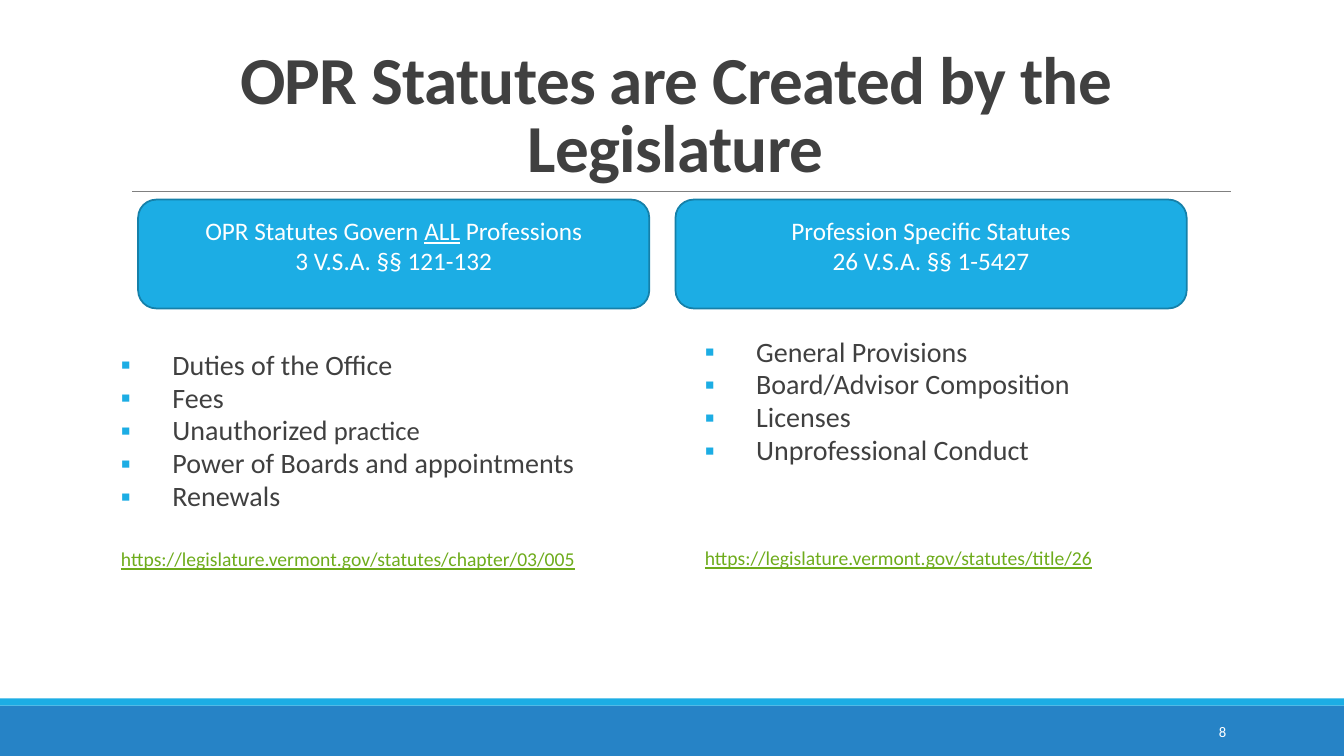
from dataclasses import dataclass

from lxml.etree import SubElement
from pptx import Presentation
from pptx.dml.color import RGBColor
from pptx.enum.shapes import MSO_CONNECTOR, MSO_SHAPE
from pptx.enum.text import MSO_ANCHOR, MSO_AUTO_SIZE, PP_ALIGN
from pptx.oxml.ns import qn
from pptx.util import Inches, Pt


@dataclass(frozen=True)
class Theme:
    font: str = "Calibri"
    ink: str = "404040"
    white: str = "FFFFFF"
    accent: str = "1CADE4"
    accent_edge: str = "1580A9"
    footer: str = "2683C6"
    rule: str = "808080"
    link: str = "6EAC1C"
    title_size: float = 48
    item_size: float = 20
    small_item_size: float = 19
    heading_size: float = 18
    link_size: float = 14
    number_size: float = 10.5


class StatuteSlide:
    def __init__(self, slide, theme):
        self.slide = slide
        self.theme = theme

    def place(self, shape, left, top, width, height):
        shape.left, shape.top = Inches(left), Inches(top)
        shape.width, shape.height = Inches(width), Inches(height)

    def style(self, paragraph, size, color, bold=False, underline=False):
        font = paragraph.font
        font.name, font.size = self.theme.font, Pt(size)
        font.bold, font.underline = bold, underline
        font.color.rgb = RGBColor.from_string(color)

    def block(self, kind, box, fill, edge=None):
        shape = self.slide.shapes.add_shape(kind, *map(Inches, box))
        shape.shadow.inherit = False
        shape.fill.solid()
        shape.fill.fore_color.rgb = RGBColor.from_string(fill)
        if edge:
            shape.line.color.rgb = RGBColor.from_string(edge)
            shape.line.width = Pt(1.25)
        else:
            shape.line.fill.background()
        return shape

    def rule(self, left, right, y):
        line = self.slide.shapes.add_connector(
            MSO_CONNECTOR.STRAIGHT, Inches(left), Inches(y), Inches(right), Inches(y))
        line.line.color.rgb = RGBColor.from_string(self.theme.rule)
        line.line.width = Pt(0.5)
        SubElement(line._element.spPr, qn("a:effectLst"))

    def title(self, text, box):
        title = self.slide.shapes.title
        self.place(title, *box)
        frame = title.text_frame
        frame.text = text
        frame.word_wrap = True
        frame.auto_size = MSO_AUTO_SIZE.NONE
        frame.vertical_anchor = MSO_ANCHOR.BOTTOM
        paragraph = frame.paragraphs[0]
        paragraph.alignment = PP_ALIGN.CENTER
        paragraph.line_spacing = 0.85
        self.style(paragraph, self.theme.title_size, self.theme.ink, bold=True)
        # Slightly tightened letters
        paragraph._p.pPr.find(qn("a:defRPr")).set("spc", "-50")

    def heading(self, lines, box):
        card = self.block(MSO_SHAPE.ROUNDED_RECTANGLE, box,
                          self.theme.accent, self.theme.accent_edge)
        frame = card.text_frame
        frame.word_wrap = True
        frame.vertical_anchor = MSO_ANCHOR.TOP
        frame.margin_top = Inches(0.1)
        for index, parts in enumerate(lines):
            paragraph = frame.add_paragraph() if index else frame.paragraphs[0]
            paragraph.alignment = PP_ALIGN.CENTER
            self.style(paragraph, self.theme.heading_size, self.theme.white)
            for part in parts:
                run = paragraph.add_run()
                run.text = part
                if part == "ALL":
                    run.font.underline = True

    def bullet(self, paragraph):
        properties = paragraph._p.get_or_add_pPr()
        properties.set("marL", str(Inches(0.51)))
        properties.set("indent", str(-Inches(0.51)))
        color = SubElement(properties, qn("a:buClr"))
        SubElement(color, qn("a:srgbClr"), val=self.theme.accent)
        SubElement(properties, qn("a:buFont"), typeface=self.theme.font)
        SubElement(properties, qn("a:buChar"), char="▪")

    def no_bullet(self, paragraph):
        properties = paragraph._p.get_or_add_pPr()
        properties.set("marL", "0")
        properties.set("indent", "0")
        SubElement(properties, qn("a:buNone"))

    def topics(self, body, box, inset, items, link, link_gap):
        self.place(body, *box)
        frame = body.text_frame
        frame.word_wrap = True
        frame.auto_size = MSO_AUTO_SIZE.NONE
        frame.vertical_anchor = MSO_ANCHOR.TOP
        frame.margin_left = frame.margin_right = 0
        frame.margin_top, frame.margin_bottom = Inches(inset), Inches(0.05)
        for index, item in enumerate(items):
            paragraph = frame.add_paragraph() if index else frame.paragraphs[0]
            self.bullet(paragraph)
            paragraph.space_before = paragraph.space_after = Pt(0)
            paragraph.line_spacing = 0.98
            self.style(paragraph, self.theme.item_size, self.theme.ink)
            for part in item:
                run = paragraph.add_run()
                run.text = part
                if part == "practice":
                    run.font.size = Pt(self.theme.small_item_size)
        source = frame.add_paragraph()
        source.text = link
        self.no_bullet(source)
        source.space_before = Pt(link_gap)
        self.style(source, self.theme.link_size, self.theme.link, underline=True)

    def page_number(self, number, box):
        frame = self.slide.shapes.add_textbox(*map(Inches, box)).text_frame
        frame.word_wrap = True
        frame.vertical_anchor = MSO_ANCHOR.MIDDLE
        frame.text = number
        paragraph = frame.paragraphs[0]
        paragraph.alignment = PP_ALIGN.RIGHT
        self.style(paragraph, self.theme.number_size, self.theme.white)


def main():
    deck = Presentation()
    deck.slide_width, deck.slide_height = Inches(13.33), Inches(7.5)
    slide = deck.slides.add_slide(deck.slide_layouts[3])
    theme = Theme()
    page = StatuteSlide(slide, theme)

    # Footer bands and title rule
    page.block(MSO_SHAPE.RECTANGLE, (0, 7, 13.33, 0.5), theme.footer)
    page.block(MSO_SHAPE.RECTANGLE, (0, 6.93, 13.33, 0.07), theme.accent)
    page.rule(1.31, 12.21, 1.9)
    page.page_number("8", (10.83, 7.06, 1.43, 0.4))

    # Title
    page.title("OPR Statutes are Created by the Legislature", (1.2, 0.31, 11, 1.59))

    # Column headings
    headings = [
        [["OPR Statutes Govern ", "ALL", " Professions"], ["3 V.S.A. §§ 121-132"]],
        [["Profession Specific Statutes"], ["26 V.S.A. §§ 1-5427"]],
    ]
    for column, lines in enumerate(headings):
        page.heading(lines, (1.37 + 5.33 * column, 1.98, 5.07, 1.08))

    # Topics and source link under each heading
    page.topics(
        slide.placeholders[1], (1.2, 3.06, 5.18, 2.84), 0.4,
        [["Duties of the Office"], ["Fees"], ["Unauthorized ", "practice"],
         ["Power of Boards and appointments"], ["Renewals"]],
        "https://legislature.vermont.gov/statutes/chapter/03/005", 24)
    page.topics(
        slide.placeholders[2], (6.99, 3.26, 5.18, 2.63), 0.07,
        [["General Provisions"], ["Board/Advisor Composition"],
         ["Licenses"], ["Unprofessional Conduct"]],
        "https://legislature.vermont.gov/statutes/title/26", 56)

    deck.save("out.pptx")


if __name__ == "__main__":
    main()
